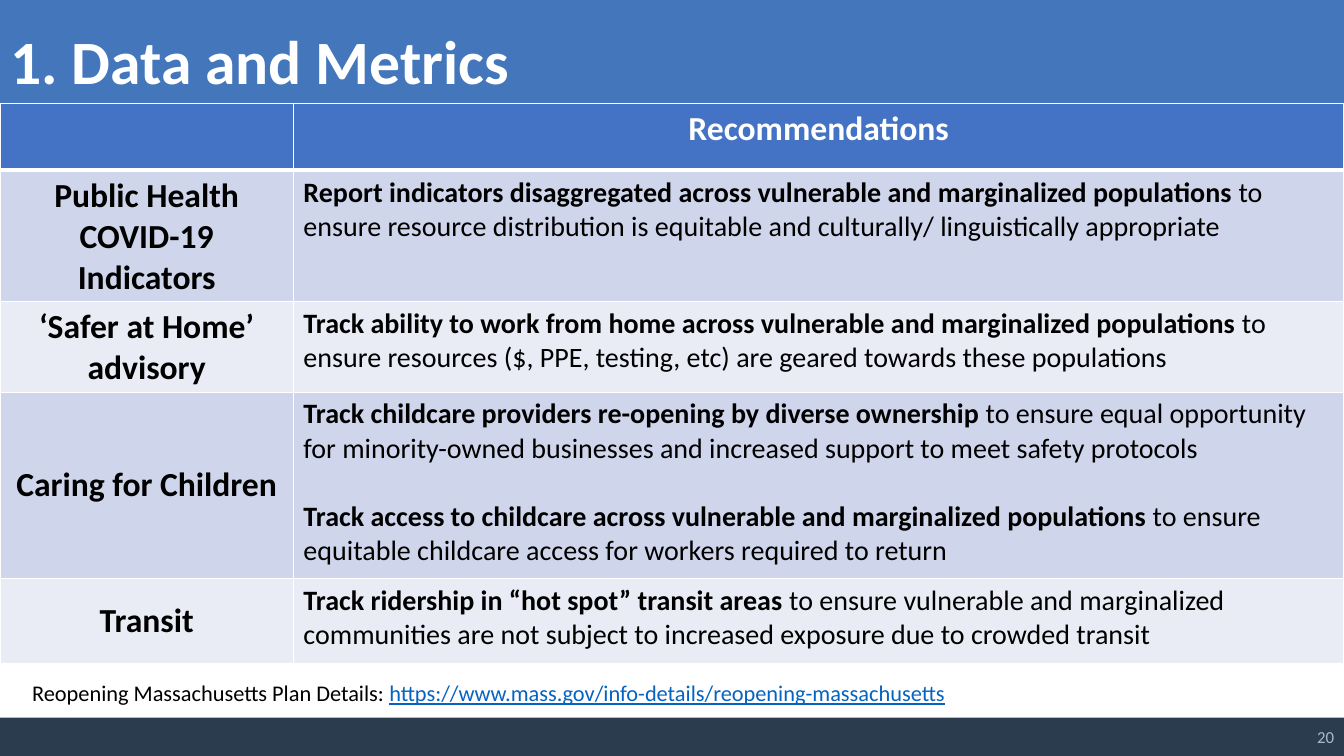
from lxml import etree
from pptx import Presentation
from pptx import util as u
from pptx.dml.color import RGBColor
from pptx.enum import shapes, text
from pptx.oxml import ns

PX = 9144
WHITE = RGBColor(0xFF, 0xFF, 0xFF)
BLACK = RGBColor(0, 0, 0)
BLUE = RGBColor(0x43, 0x76, 0xBB)
NAVY = RGBColor(0x2A, 0x3C, 0x4E)
HEAD = RGBColor(0x44, 0x72, 0xC4)
DARK = RGBColor(0xCF, 0xD5, 0xEA)
PALE = RGBColor(0xE9, 0xEB, 0xF5)
LINK = RGBColor(0x05, 0x63, 0xC1)
GREY = RGBColor(0xAD, 0xB9, 0xCA)

COLS = [291, 1042]
ROWS = [66, 130, 90, 185, 84]
LABEL = {"size": u.Pt(24), "bold": True}
BODY = {"size": u.Pt(20), "bold": False}

TOPICS = [
    ("Public Health COVID-19 Indicators", [
        ("Report indicators disaggregated across vulnerable and marginalized populations",
         " to ensure resource distribution is equitable and culturally/ linguistically appropriate")]),
    ("‘Safer at Home’ advisory", [
        ("Track ability to work from home across vulnerable and marginalized populations ",
         "to ensure resources ($, PPE, testing, etc) are geared towards these populations")]),
    ("Caring for Children", [
        ("Track childcare providers re-opening by diverse ownership ",
         "to ensure equal opportunity for minority-owned businesses and increased support "
         "to meet safety protocols"),
        ("Track access to childcare across vulnerable and marginalized populations ",
         "to ensure equitable childcare access for workers required to return")]),
    ("Transit", [
        ("Track ridership in “hot spot” transit areas ",
         "to ensure vulnerable and marginalized communities are not subject to increased "
         "exposure due to crowded transit")]),
]


def px(*vals):
    return [u.Emu(val * PX) for val in vals]


def add_run(para, words, color=BLACK, **form):
    run = para.add_run()
    run.text = words
    run.font.name = "Calibri"
    run.font.color.rgb = color
    for key, val in form.items():
        setattr(run.font, key, val)


def add_bar(slide, box, color):
    bar = slide.shapes.add_shape(shapes.MSO_SHAPE.RECTANGLE, *px(*box))
    bar.shadow.inherit = False
    bar.fill.solid()
    bar.fill.fore_color.rgb = color
    bar.line.fill.background()
    slide.shapes.title.element.addprevious(bar.element)


def set_title(slide, box, words):
    title = slide.shapes.title
    for key, val in zip(("left", "top", "width", "height"), px(*box)):
        setattr(title, key, val)
    frame = title.text_frame
    frame.auto_size = text.MSO_AUTO_SIZE.NONE
    frame.vertical_anchor = text.MSO_ANCHOR.TOP
    para = frame.paragraphs[0]
    para.alignment = text.PP_ALIGN.LEFT
    add_run(para, words, WHITE, size=u.Pt(44), bold=True)


def add_note(slide, box, anchor, align):
    frame = slide.shapes.add_textbox(*px(*box)).text_frame
    frame.word_wrap = True
    frame.vertical_anchor = anchor
    para = frame.paragraphs[0]
    para.alignment = align
    return para


def style_cell(cell, color, top, base):
    props = cell._tc.get_or_add_tcPr()
    for side, wide in zip("LRTB", (1, 1, top, base)):
        line = etree.SubElement(props, ns.qn(f"a:ln{side}"), w=str(u.Pt(wide)))
        fill = etree.SubElement(line, ns.qn("a:solidFill"))
        etree.SubElement(fill, ns.qn("a:srgbClr"), val=str(WHITE))
    cell.fill.solid()
    cell.fill.fore_color.rgb = color


def set_label(cell, words, color, anchor):
    cell.vertical_anchor = anchor
    para = cell.text_frame.paragraphs[0]
    para.alignment = text.PP_ALIGN.CENTER
    add_run(para, words, color, **LABEL)


def set_advice(cell, items):
    frame = cell.text_frame
    for num, (lead, rest) in enumerate(items):
        para = frame.add_paragraph() if num else frame.paragraphs[0]
        if num:
            para.space_before = u.Pt(24.4)
        add_run(para, lead, **{**BODY, "bold": True})
        add_run(para, rest, **BODY)


def add_grid(slide, left, top):
    box = px(left, top, sum(COLS), sum(ROWS))
    grid = slide.shapes.add_table(len(ROWS), len(COLS), *box).table
    for col, wide in zip(grid.columns, px(*COLS)):
        col.width = wide
    for num, (row, tall) in enumerate(zip(grid.rows, px(*ROWS))):
        row.height = tall
        color = (DARK if num % 2 else PALE) if num else HEAD
        for cell in row.cells:
            style_cell(cell, color, 3 if num == 1 else 1, 1 if num else 3)
    set_label(grid.cell(0, 1), "Recommendations", WHITE, text.MSO_ANCHOR.TOP)
    for num, (name, items) in enumerate(TOPICS, 1):
        set_label(grid.cell(num, 0), name, BLACK, text.MSO_ANCHOR.MIDDLE)
        set_advice(grid.cell(num, 1), items)


def main():
    deck = Presentation()
    deck.slide_width, deck.slide_height = px(1333, 750)
    slide = deck.slides.add_slide(deck.slide_layouts[5])
    add_bar(slide, (0, 0, 1333, 107), BLUE)
    add_bar(slide, (0, 712, 1333, 38), NAVY)
    set_title(slide, (0, 18, 1301, 84), "1. Data and Metrics")
    para = add_note(slide, (22, 669, 1145, 64), text.MSO_ANCHOR.TOP, text.PP_ALIGN.LEFT)
    add_run(para, "Reopening Massachusetts Plan Details: ", size=u.Pt(16))
    add_run(para, "https://www.mass.gov/info-details/reopening-massachusetts",
            LINK, size=u.Pt(16), underline=True)
    add_grid(slide, 0, 103)
    para = add_note(slide, (1034, 711, 299, 40), text.MSO_ANCHOR.MIDDLE, text.PP_ALIGN.RIGHT)
    add_run(para, "20", GREY, size=u.Pt(12))
    deck.save("out.pptx")


if __name__ == "__main__":
    main()
